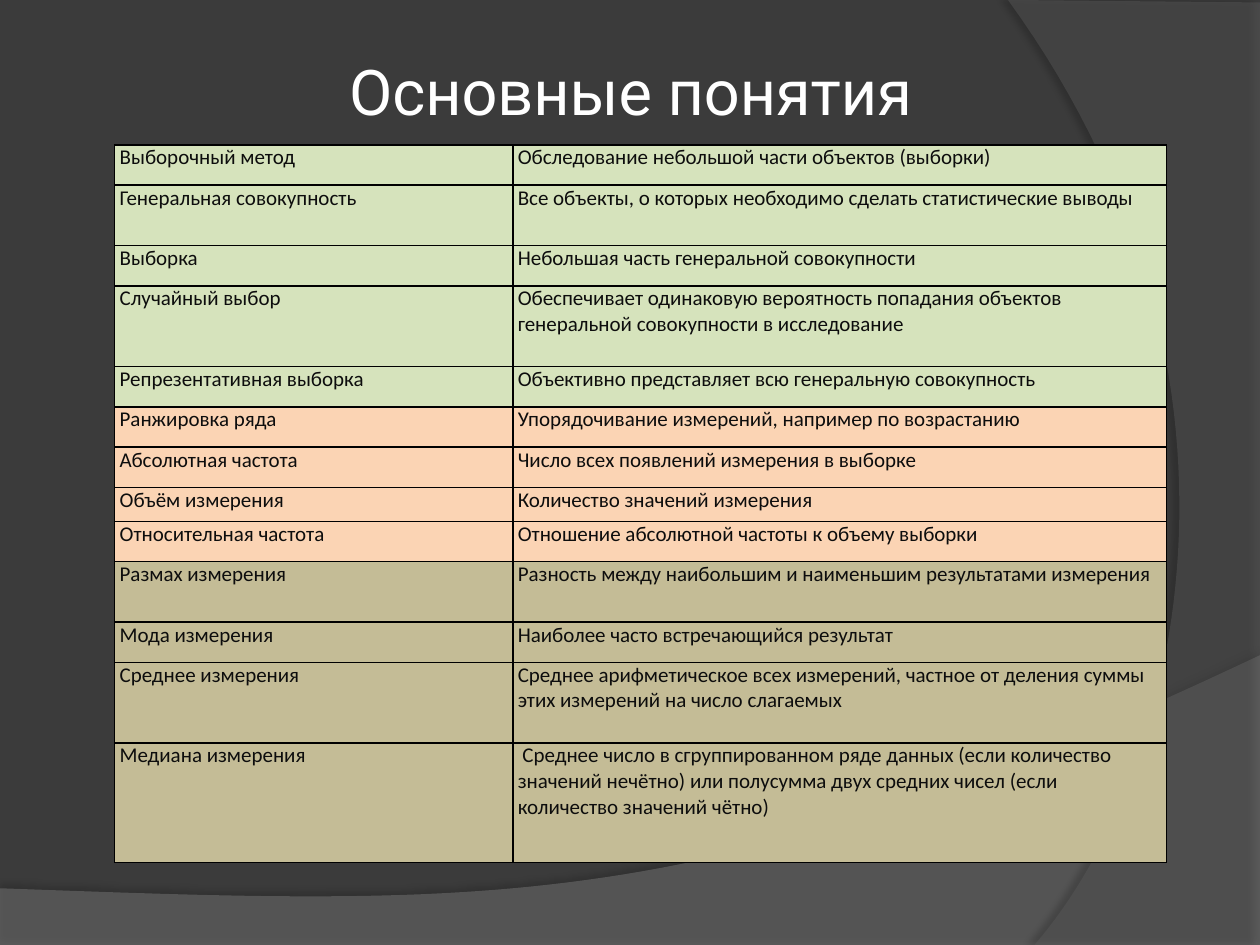
"""Builds the slide of basic statistical concepts."""
from dataclasses import dataclass

from pptx import Presentation
from pptx import util as u
from pptx.dml.color import RGBColor
from pptx.enum import text
from pptx.oxml import parse_xml
from pptx.oxml.ns import nsdecls, qn


@dataclass(frozen=True)
class Theme:
    background: str = "3B3B3B"
    wave: str = "7F7F7F"
    arc: str = "5E5E5E"
    black: str = "000000"
    title: str = "FFFFFF"
    body: str = "0D0D0D"
    sampling: str = "D6E3BC"
    frequency: str = "FBD4B4"
    summary: str = "C4BC96"
    title_font: str = "Roboto"
    body_font: str = "Calibri"
    title_size: int = 36
    body_size: int = 12
    border: int = 1


THEME = Theme()

GROUPS = [
    (THEME.sampling, [
        ("Выборочный метод", "Обследование небольшой части объектов (выборки)", 0.32),
        ("Генеральная совокупность",
         "Все объекты, о которых необходимо сделать статистические выводы", 0.48),
        ("Выборка", "Небольшая часть генеральной совокупности", 0.32),
        ("Случайный выбор",
         "Обеспечивает одинаковую вероятность попадания объектов "
         "генеральной совокупности в исследование", 0.64),
        ("Репрезентативная выборка",
         "Объективно представляет всю генеральную совокупность", 0.32),
    ]),
    (THEME.frequency, [
        ("Ранжировка ряда", "Упорядочивание измерений, например по возрастанию", 0.32),
        ("Абсолютная частота", "Число всех появлений измерения в выборке", 0.32),
        ("Объём измерения", "Количество значений измерения", 0.27),
        ("Относительная частота", "Отношение абсолютной частоты к объему выборки", 0.32),
    ]),
    (THEME.summary, [
        ("Размах измерения",
         "Разность между наибольшим и наименьшим результатами измерения", 0.48),
        ("Мода измерения", "Наиболее часто встречающийся результат", 0.32),
        ("Среднее измерения",
         "Среднее арифметическое всех измерений, частное от деления суммы "
         "этих измерений на число слагаемых", 0.64),
        ("Медиана измерения",
         " Среднее число в сгруппированном ряде данных (если количество "
         "значений нечётно) или полусумма двух средних чисел (если "
         "количество значений чётно)", 0.95),
    ]),
]


def bezier(start, control_1, control_2, end, steps=60):
    points = []
    for step in range(1, steps + 1):
        t = step / steps
        weights = ((1 - t) ** 3, 3 * t * (1 - t) ** 2, 3 * t * t * (1 - t), t ** 3)
        corners = (start, control_1, control_2, end)
        points.append(tuple(sum(w * c[axis] for w, c in zip(weights, corners))
                            for axis in (0, 1)))
    return points


def apply_format(target, values):
    for name, value in values.items():
        setattr(target, name, value)


class SlideBuilder:
    def __init__(self, slide, theme):
        self.slide = slide
        self.theme = theme
        self.paint(slide.background.fill, theme.background)

    def paint(self, fill, color):
        fill.solid()
        fill.fore_color.rgb = RGBColor.from_string(color)

    def add_words(self, frame, content, font, size, color):
        run = frame.paragraphs[0].add_run()
        run.text = content
        apply_format(run.font, {"name": font, "size": u.Pt(size)})
        run.font.color.rgb = RGBColor.from_string(color)

    def backdrop(self, points, color, opacity, shadow_opacity, distance, angle):
        corners = [(u.Inches(x), u.Inches(y)) for x, y in points]
        builder = self.slide.shapes.build_freeform(*corners[0])
        builder.add_line_segments(corners[1:], close=True)
        shape = builder.convert_to_shape()
        shape.line.fill.background()
        self.paint(shape.fill, color)
        shape.shadow.inherit = False
        properties = shape.element.spPr
        properties.find(f".//{qn('a:srgbClr')}").append(
            parse_xml(f'<a:alpha {nsdecls("a")} val="{opacity * 1000}"/>'))
        properties.find(qn("a:effectLst")).append(parse_xml(
            f'<a:outerShdw {nsdecls("a")} blurRad="{u.Pt(4)}" dist="{u.Pt(distance)}" '
            f'dir="{angle * 60000}" algn="ctr" rotWithShape="0">'
            f'<a:srgbClr val="{self.theme.black}"><a:alpha val="{shadow_opacity * 1000}"/>'
            '</a:srgbClr></a:outerShdw>'))

    def title(self, content, left, top, width, height):
        box = self.slide.shapes.add_textbox(*map(u.Inches, (left, top, width, height)))
        inset = u.Inches(0.05)
        apply_format(box.text_frame, {
            "word_wrap": True, "vertical_anchor": text.MSO_ANCHOR.MIDDLE,
            "margin_left": inset, "margin_right": inset,
            "margin_top": inset, "margin_bottom": inset})
        self.add_words(box.text_frame, content, self.theme.title_font,
                       self.theme.title_size, self.theme.title)

    def cell(self, cell, content, color):
        apply_format(cell, {
            "margin_left": u.Inches(0.04), "margin_right": u.Inches(0.04),
            "margin_top": 0, "margin_bottom": 0,
            "vertical_anchor": text.MSO_ANCHOR.TOP})
        self.paint(cell.fill, color)
        properties = cell._tc.get_or_add_tcPr()
        for index, side in enumerate("LRTB"):
            properties.insert(index, parse_xml(
                f'<a:ln{side} {nsdecls("a")} w="{u.Pt(self.theme.border)}"><a:solidFill>'
                f'<a:srgbClr val="{self.theme.black}"/></a:solidFill></a:ln{side}>'))
        self.add_words(cell.text_frame, content, self.theme.body_font,
                       self.theme.body_size, self.theme.body)

    def table(self, groups, left, top, widths):
        rows = [(color, *row) for color, terms in groups for row in terms]
        total = sum(row[-1] for row in rows)
        frame = self.slide.shapes.add_table(
            len(rows), len(widths),
            *map(u.Inches, (left, top, sum(widths), total)))
        table = frame.table
        apply_format(table, {"first_row": False, "horz_banding": False})
        for column, width in zip(table.columns, widths):
            column.width = u.Inches(width)
        for index, (color, term, meaning, height) in enumerate(rows):
            table.rows[index].height = u.Inches(height)
            for column, content in enumerate((term, meaning)):
                self.cell(table.cell(index, column), content, color)


def main():
    presentation = Presentation()
    apply_format(presentation, {"slide_width": u.Inches(10), "slide_height": u.Inches(7.5)})
    slide = presentation.slides.add_slide(presentation.slide_layouts[6])
    builder = SlideBuilder(slide, THEME)
    wave = [(0, 7.05), (0, 7.51), (10, 7.51), (10, 5.2)]
    wave += bezier(wave[-1], (5.59, 7.29), (3.91, 7.19), wave[0])
    builder.backdrop(wave, THEME.wave, 45, 35, 3.5, 270)
    arc = [(10, 0.02), (10, 7.5), (8.21, 7.5)]
    arc += bezier(arc[-1], (9.35, 6.19), (10.18, 3), (8, 0))
    builder.backdrop(arc, THEME.arc, 40, 45, 4, 180)
    builder.table(GROUPS, 0.91, 1.15, (3.16, 5.19))
    builder.title("Основные понятия", 2.72, 0.21, 5.95, 1.02)
    presentation.save("out.pptx")


if __name__ == "__main__":
    main()
